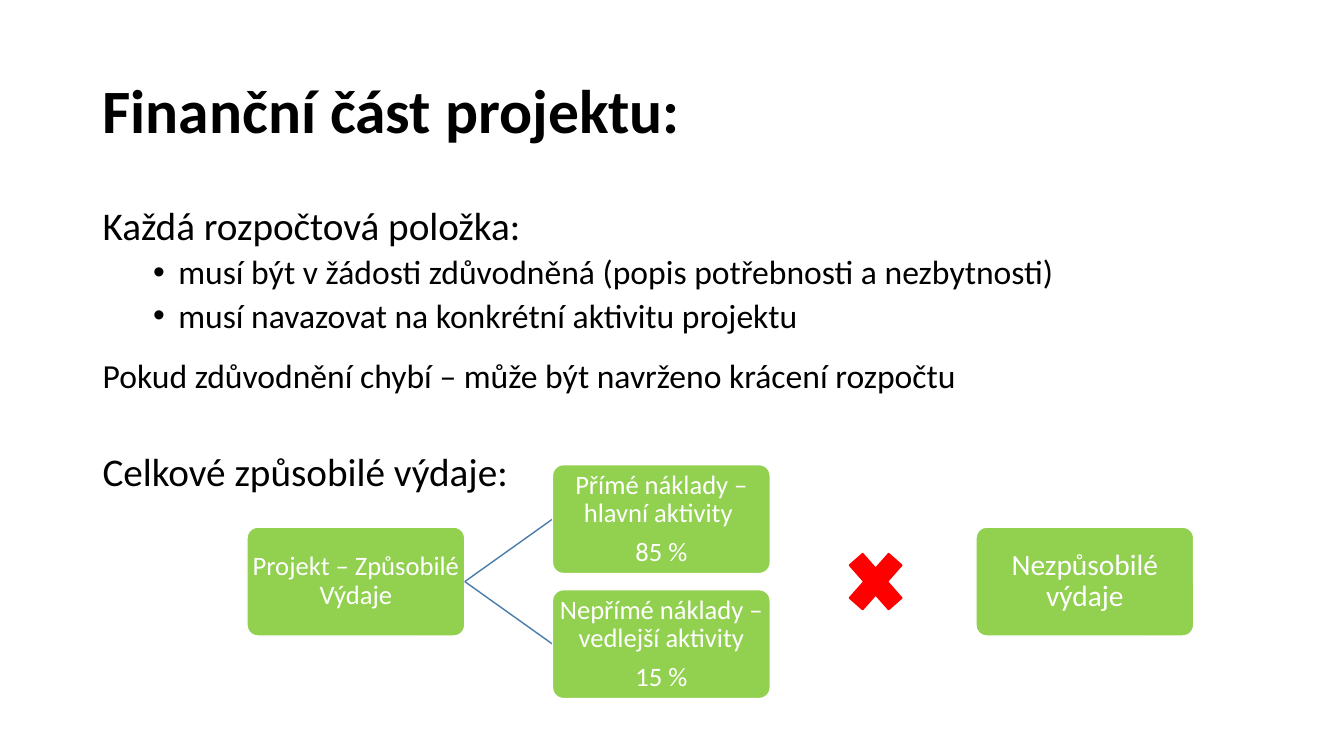
from dataclasses import dataclass

from lxml import etree
from pptx import Presentation
from pptx.dml.color import RGBColor
from pptx.enum.shapes import MSO_CONNECTOR, MSO_SHAPE
from pptx.enum.text import MSO_ANCHOR, PP_ALIGN
from pptx.oxml.ns import qn
from pptx.util import Inches, Pt

ROUND, CROSS = MSO_SHAPE.ROUNDED_RECTANGLE, MSO_SHAPE.MATH_MULTIPLY
STRAIGHT = MSO_CONNECTOR.STRAIGHT
TOP, MIDDLE = MSO_ANCHOR.TOP, MSO_ANCHOR.MIDDLE
LEFT, CENTER = PP_ALIGN.LEFT, PP_ALIGN.CENTER


@dataclass(frozen=True)
class Theme:
    font: str = "Calibri"
    ink: str = "000000"
    white: str = "FFFFFF"
    green: str = "92D050"
    blue: str = "497CAB"
    red: str = "FF0000"
    title: int = 44
    large: int = 28
    body: int = 24
    box: int = 19
    side: int = 21


THEME = Theme()

TITLE = "Finanční část projektu:"
# text, size, space before, space after, bullet
BODY = [
    ("Každá rozpočtová položka:", THEME.large, 10, 0, False),
    ("musí být v žádosti zdůvodněná (popis potřebnosti a nezbytnosti)",
     THEME.body, 5, 0, True),
    ("musí navazovat na konkrétní aktivitu projektu", THEME.body, 5, 12, True),
    ("Pokud zdůvodnění chybí – může být navrženo krácení rozpočtu",
     THEME.body, 5, 0, False),
    ("Celkové způsobilé výdaje:", THEME.large, 41, 0, False),
]
TOTAL = ["Projekt – Způsobilé Výdaje"]
PARTS = [
    ["Přímé náklady – hlavní aktivity ", "85 %"],
    ["Nepřímé náklady – vedlejší aktivity", "15 %"],
]
OTHER = ["Nezpůsobilé výdaje"]

MARGIN, WIDE = 0.92, 11.5
BOX_W, BOX_H = 2.16, 1.08
TOTAL_X, PART_X, OTHER_X = 2.45, 5.48, 9.68
AXIS_Y = 5.77
STEP = 1.24
CROSS_X, CROSS_W, CROSS_H = 8.31, 0.75, 0.85


def color(code):
    return RGBColor.from_string(code)


def style(para, size, ink, before=0, after=0, align=LEFT, bold=False):
    para.font.name = THEME.font
    para.font.size = Pt(size)
    para.font.bold = bold
    para.font.color.rgb = color(ink)
    para.alignment = align
    para.line_spacing = 0.9
    para.space_before = Pt(before)
    para.space_after = Pt(after)


def add_bullet(para):
    props = para._p.get_or_add_pPr()
    props.set("marL", str(Inches(0.75)))
    props.set("indent", str(Inches(-0.25)))
    font = etree.Element(qn("a:buFont"), typeface="Arial")
    mark = etree.Element(qn("a:buChar"), char="•")
    spot = props.find(qn("a:defRPr"))
    spot.addprevious(font)
    spot.addprevious(mark)


def fill_lines(frame, lines):
    """Write each line as a paragraph and yield the paragraphs."""
    for i, line in enumerate(lines):
        para = frame.add_paragraph() if i else frame.paragraphs[0]
        para.text = line
        yield para


def add_frame(slide, top, height, anchor):
    box = slide.shapes.add_textbox(
        Inches(MARGIN), Inches(top), Inches(WIDE), Inches(height))
    frame = box.text_frame
    frame.word_wrap = True
    frame.vertical_anchor = anchor
    return frame


def add_shape(slide, kind, x, mid, w, h, fill, line):
    """Place a plain shape whose middle lies at height mid."""
    shape = slide.shapes.add_shape(
        kind, Inches(x), Inches(mid - h / 2), Inches(w), Inches(h))
    shape.shadow.inherit = False
    shape.fill.solid()
    shape.fill.fore_color.rgb = color(fill)
    shape.line.color.rgb = color(line)
    shape.line.width = Pt(1)
    return shape


def add_box(slide, x, mid, lines, size=THEME.box):
    box = add_shape(slide, ROUND, x, mid, BOX_W, BOX_H, THEME.green, THEME.white)
    box.adjustments[0] = 0.1
    frame = box.text_frame
    frame.word_wrap = True
    frame.vertical_anchor = MIDDLE
    frame.margin_left = frame.margin_right = Inches(0.01)
    frame.margin_top = frame.margin_bottom = Inches(0.01)
    for para in fill_lines(frame, lines):
        style(para, size, THEME.white, after=round(size * 0.35), align=CENTER)


def add_branch(slide, end_y):
    line = slide.shapes.add_connector(
        STRAIGHT, Inches(TOTAL_X + BOX_W), Inches(AXIS_Y),
        Inches(PART_X), Inches(end_y))
    line.line.color.rgb = color(THEME.blue)
    line.line.width = Pt(1)
    etree.SubElement(line._element.spPr, qn("a:effectLst"))


def main():
    deck = Presentation()
    deck.slide_width, deck.slide_height = Inches(13.33), Inches(7.5)
    slide = deck.slides.add_slide(deck.slide_layouts[6])

    for para in fill_lines(add_frame(slide, 0.4, 1.45, MIDDLE), [TITLE]):
        style(para, THEME.title, THEME.ink, bold=True)

    frame = add_frame(slide, 2, 4.76, TOP)
    paras = fill_lines(frame, [row[0] for row in BODY])
    for para, (_, size, before, after, bullet) in zip(paras, BODY):
        style(para, size, THEME.ink, before, after)
        if bullet:
            add_bullet(para)

    add_box(slide, TOTAL_X, AXIS_Y, TOTAL)
    for i, lines in enumerate(PARTS):
        mid = AXIS_Y + (i - (len(PARTS) - 1) / 2) * STEP
        add_branch(slide, mid)
        add_box(slide, PART_X, mid, lines)
    add_box(slide, OTHER_X, AXIS_Y, OTHER, THEME.side)
    add_shape(slide, CROSS, CROSS_X, AXIS_Y, CROSS_W, CROSS_H,
              THEME.red, THEME.red)

    deck.save("out.pptx")


if __name__ == "__main__":
    main()
